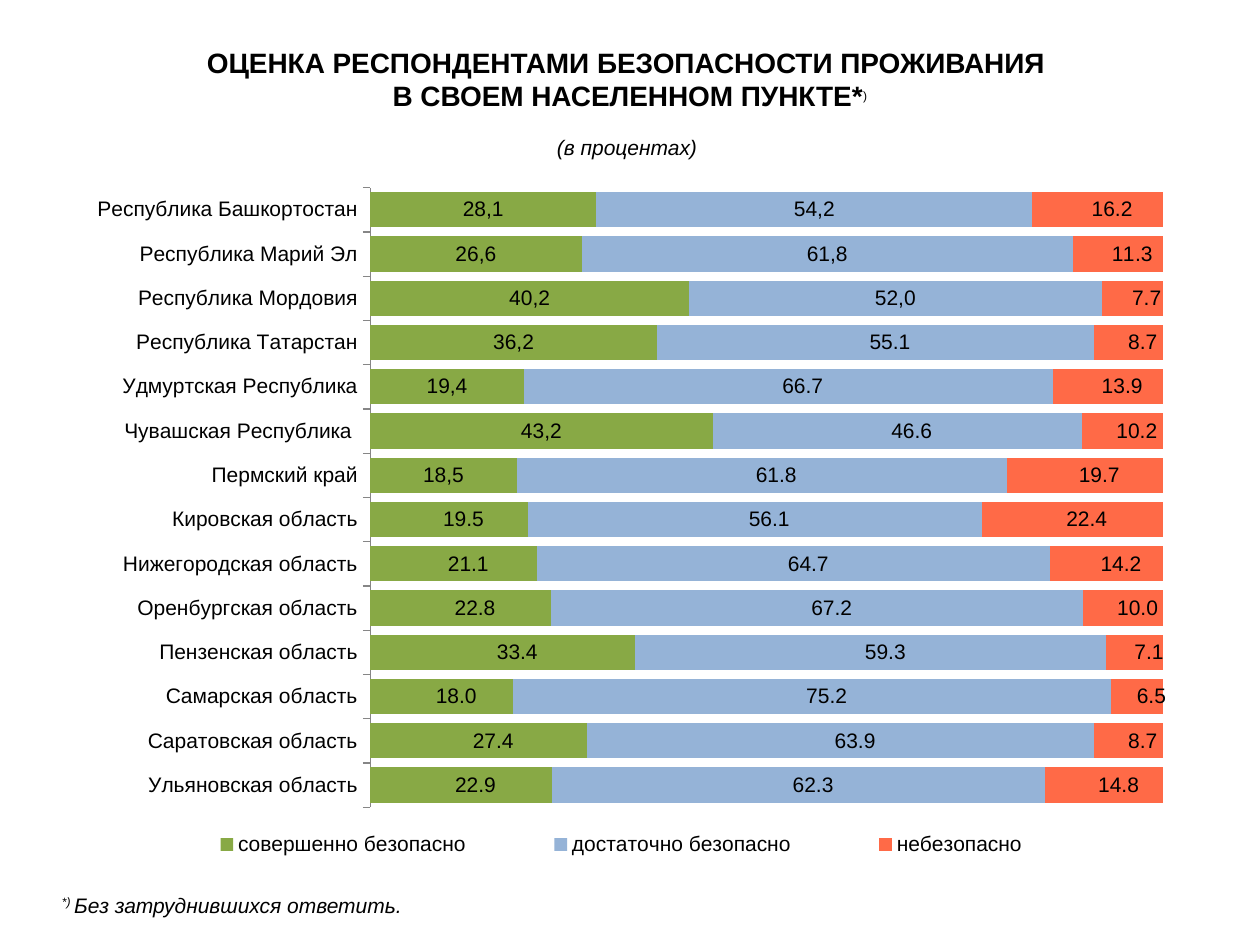
from lxml.etree import SubElement
from pptx import Presentation
from pptx.chart.data import CategoryChartData
from pptx.dml.color import RGBColor
from pptx.enum.chart import XL_CHART_TYPE as ChartType
from pptx.enum.chart import XL_LABEL_POSITION as LabelPos
from pptx.enum.chart import XL_LEGEND_POSITION as LegendPos
from pptx.enum.chart import XL_TICK_MARK as Tick
from pptx.enum.text import PP_ALIGN as Align
from pptx.oxml import parse_xml
from pptx.oxml.ns import nsdecls, qn
from pptx.util import Cm, Pt

BLACK = RGBColor(0x00, 0x00, 0x00)
GRAY = RGBColor(0x86, 0x86, 0x86)
GREEN = RGBColor(0x88, 0xA9, 0x45)
BLUE = RGBColor(0x95, 0xB3, 0xD7)
ORANGE = RGBColor(0xFF, 0x6A, 0x47)
FONT = "Arial"
NUMBER_FORMAT = r"###\ ###\ ###\ ###\ ###\ ##0.0"

REGIONS = [
    "Республика Башкортостан", "Республика Марий Эл", "Республика Мордовия",
    "Республика Татарстан", "Удмуртская Республика", "Чувашская Республика ",
    "Пермский край", "Кировская область", "Нижегородская область",
    "Оренбургская область", "Пензенская область", "Самарская область",
    "Саратовская область", "Ульяновская область",
]
# name, colour, number of leading labels written with a comma, values
ANSWERS = [
    ("совершенно безопасно", GREEN, 7,
     [28.1, 26.6, 40.2, 36.2, 19.4, 43.2, 18.5, 19.5, 21.1, 22.8, 33.4, 18.0, 27.4, 22.9]),
    ("достаточно безопасно", BLUE, 3,
     [54.2, 61.8, 52.0, 55.1, 66.7, 46.6, 61.8, 56.1, 64.7, 67.2, 59.3, 75.2, 63.9, 62.3]),
    ("небезопасно", ORANGE, 0,
     [16.2, 11.3, 7.7, 8.7, 13.9, 10.2, 19.7, 22.4, 14.2, 10.0, 7.1, 6.5, 8.7, 14.8]),
]


def format_font(font, size=12, bold=False, italic=False):
    font.name, font.size = FONT, Pt(size)
    font.bold, font.italic = bold, italic
    font.color.rgb = BLACK


def add_run(p, text, superscript=False, **style):
    r = p.add_run()
    r.text = text
    format_font(r.font, **style)
    if superscript:
        r.font._element.set("baseline", "30000")


def add_text(slide, box, lines, align=Align.LEFT, wrap=True):
    """Each line is a list of (text, format) runs."""
    tf = slide.shapes.add_textbox(*box).text_frame
    tf.word_wrap = wrap
    for i, runs in enumerate(lines):
        p = tf.paragraphs[0] if i == 0 else tf.add_paragraph()
        p.alignment = align
        for text, style in runs:
            add_run(p, text, **style)


def set_layout(parent, index, inner=False, **fractions):
    """Place a chart part by fractions x, y, w, h of the chart."""
    for old in parent.findall(qn("c:layout")):
        parent.remove(old)
    layout = parse_xml(f"<c:layout {nsdecls('c')}><c:manualLayout/></c:layout>")
    manual = layout[0]
    if inner:
        SubElement(manual, qn("c:layoutTarget")).set("val", "inner")
    for side in "xy":
        SubElement(manual, qn(f"c:{side}Mode")).set("val", "edge")
    for side, value in fractions.items():
        SubElement(manual, qn(f"c:{side}")).set("val", str(value))
    parent.insert(index, layout)


def format_series(series, color, comma_count, values):
    series.format.fill.solid()
    series.format.fill.fore_color.rgb = color
    labels = series.data_labels
    labels.show_value = True
    labels.number_format, labels.number_format_is_linked = NUMBER_FORMAT, False
    labels.position = LabelPos.CENTER
    format_font(labels.font)
    for i, value in enumerate(values[:comma_count]):
        label = series.points[i].data_label
        add_run(label.text_frame.paragraphs[0], f"{value:.1f}".replace(".", ","))
        label.position = LabelPos.CENTER


def add_safety_chart(slide, box):
    data = CategoryChartData(number_format=NUMBER_FORMAT)
    data.categories = REGIONS
    for name, _, _, values in ANSWERS:
        data.add_series(name, values)
    chart = slide.shapes.add_chart(ChartType.BAR_STACKED_100, *box, data).chart
    chart.has_title = False
    format_font(chart.font)

    plot = chart.plots[0]
    plot.gap_width, plot.overlap = 25, 100
    plot.vary_by_categories = False
    for series, (_, color, comma_count, values) in zip(plot.series, ANSWERS):
        format_series(series, color, comma_count, values)

    regions = chart.category_axis
    regions.reverse_order = True
    regions.major_tick_mark = Tick.OUTSIDE
    regions.format.line.color.rgb = GRAY
    format_font(regions.tick_labels.font)
    chart.value_axis.visible = False
    chart.value_axis.has_major_gridlines = False

    chart.has_legend = True
    legend = chart.legend
    legend.position = LegendPos.BOTTOM
    legend.include_in_layout = False
    format_font(legend.font)
    set_layout(legend._element, 1, x=0.08, y=0.91, w=0.86, h=0.06)
    plot_area = chart._chartSpace.chart.plotArea
    set_layout(plot_area, 0, inner=True, x=0.286, y=0.041, w=0.707, h=0.848)


def add_heading(slide, left, top, width):
    bold = {"size": 16, "bold": True}
    add_text(slide, (left, top, width, Cm(1.62)), [
        [("ОЦЕНКА РЕСПОНДЕНТАМИ БЕЗОПАСНОСТИ ПРОЖИВАНИЯ ", bold)],
        [("В СВОЕМ НАСЕЛЕННОМ ПУНКТЕ*", bold), (")", {"superscript": True})],
    ], Align.CENTER)
    add_text(slide, (left, top + Cm(1.8), width, Cm(0.76)),
             [[("(в процентах) ", {"italic": True})]], Align.CENTER)


def add_footnote(slide, box):
    add_text(slide, box, [[
        ("*) ", {"italic": True, "superscript": True}),
        ("Без затруднившихся ответить.", {"italic": True}),
    ]], wrap=False)


def main():
    prs = Presentation()
    prs.slide_width, prs.slide_height = Cm(25.4), Cm(19.05)
    slide = prs.slides.add_slide(prs.slide_layouts[6])
    margin = Cm(1)
    add_safety_chart(slide, (margin, Cm(3.18), Cm(22.6), Cm(14.73)))
    add_heading(slide, 0, Cm(0.79), prs.slide_width)
    add_footnote(slide, (margin, Cm(17.86), Cm(7.52), Cm(0.76)))
    prs.save("out.pptx")


if __name__ == "__main__":
    main()
